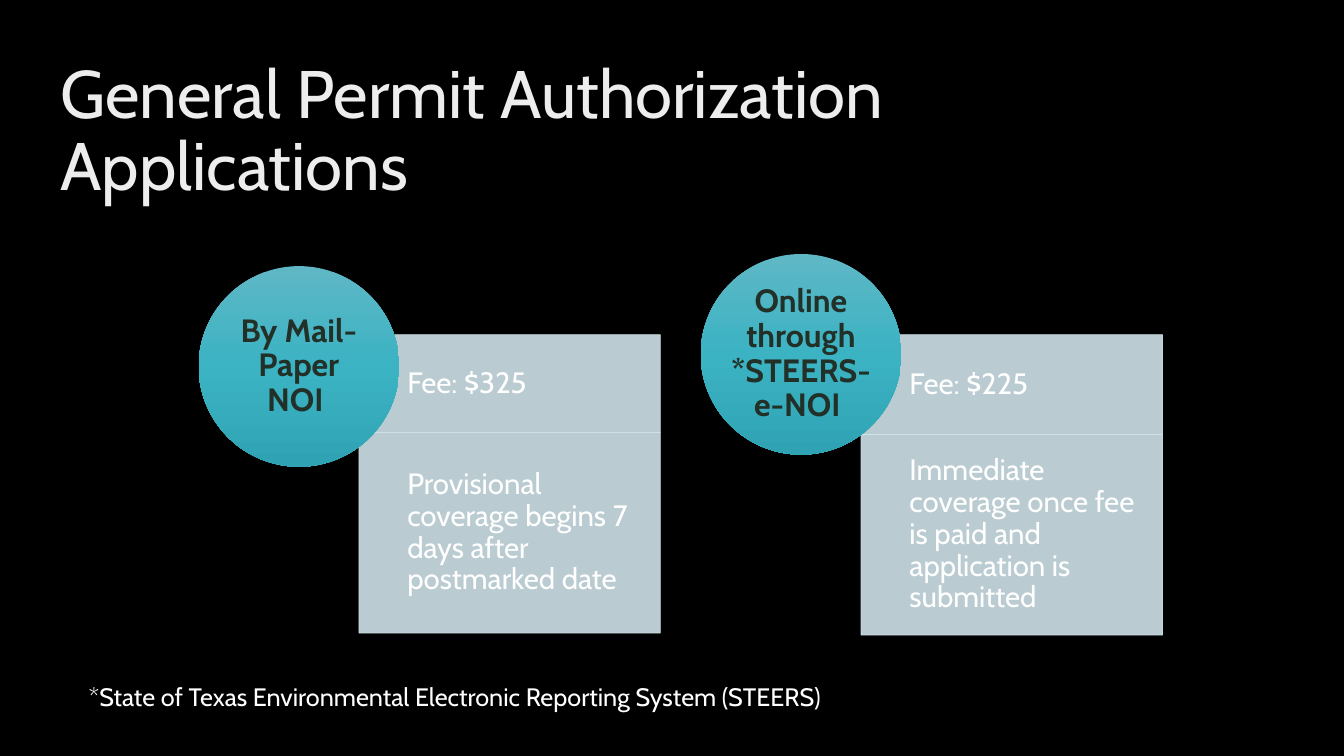
from copy import deepcopy

from lxml.etree import SubElement
from pptx import Presentation
from pptx.dml.color import RGBColor
from pptx.enum.shapes import MSO_SHAPE as Shape
from pptx.enum.text import MSO_ANCHOR as Anchor, MSO_AUTO_SIZE as AutoSize, PP_ALIGN as Align
from pptx.oxml.ns import qn
from pptx.util import Inches, Pt

COLORS = {
    "background": "000000",
    "title": "EDEDED",
    "text": "FFFFFF",
    "panel": "CFE3E8",
    "circle_text": "223028",
}
CIRCLE_GRADIENT = [(0, "5FB7C5"), (0.5, "3BB3C3"), (1, "2FA3B3")]
FONT = "Cabin"
PANEL_WIDTH = 2.99
DETAIL_HEIGHT = 1.99
CIRCLE_SIZE = 1.99
PANEL_TOP = 3.32
CIRCLE_OFFSET = 1.59

# Circle label, circle top, panel left, fee, fee row height, coverage
METHODS = [
    ("By Mail-Paper NOI ", 2.64, 3.56, "Fee: $325", 0.97,
     "Provisional coverage begins 7 days after postmarked date"),
    ("Online through *STEERS- e-NOI ", 2.52, 8.54, "Fee: $225", 0.99,
     "Immediate coverage once fee is paid and application is submitted"),
]


def rgb(name):
    return RGBColor.from_string(COLORS[name])


def write(shape, text, size, color="text", bold=False, align=Align.LEFT,
          anchor=Anchor.MIDDLE, spacing=0.9, insets=(0.1, 0.05, 0.1, 0.05)):
    frame = shape.text_frame
    frame.word_wrap = True
    frame.auto_size = AutoSize.NONE
    frame.vertical_anchor = anchor
    (frame.margin_left, frame.margin_top,
     frame.margin_right, frame.margin_bottom) = map(Inches, insets)
    frame.text = text
    paragraph = frame.paragraphs[0]
    paragraph.alignment = align
    paragraph.line_spacing = spacing
    paragraph.space_before = Pt(0)
    font = paragraph.font
    font.name, font.size, font.bold = FONT, Pt(size), bold
    font.color.rgb = rgb(color)


def add_panel(slide, text, left, top, height):
    panel = slide.shapes.add_shape(
        Shape.RECTANGLE, Inches(left), Inches(top), Inches(PANEL_WIDTH), Inches(height))
    panel.shadow.inherit = False
    panel.fill.solid()
    panel.fill.fore_color.rgb = rgb("panel")
    panel.line.color.rgb = rgb("panel")
    panel.line.width = Pt(0.5)
    for color in panel._element.spPr.iter(qn("a:srgbClr")):
        SubElement(color, qn("a:alpha"), val="90000")
    write(panel, text, 21, insets=(0.48, 0.16, 0.16, 0.16))


def add_circle(slide, text, left, top):
    circle = slide.shapes.add_shape(
        Shape.OVAL, Inches(left), Inches(top), Inches(CIRCLE_SIZE), Inches(CIRCLE_SIZE))
    circle.shadow.inherit = False
    circle.line.fill.background()
    circle.fill.gradient()
    circle.fill.gradient_angle = 270
    stops = circle._element.spPr.find(".//" + qn("a:gsLst"))
    stops.insert(1, deepcopy(stops[0]))
    for stop, (position, color) in zip(circle.fill.gradient_stops, CIRCLE_GRADIENT):
        stop.position = position
        stop.color.rgb = RGBColor.from_string(color)
    write(circle, text, 23, "circle_text", bold=True, align=Align.CENTER,
          insets=(0, 0, 0, 0))


def add_method(slide, label, circle_top, left, fee, fee_height, coverage):
    add_panel(slide, fee, left, PANEL_TOP, fee_height)
    add_panel(slide, coverage, left, PANEL_TOP + fee_height, DETAIL_HEIGHT)
    add_circle(slide, label, left - CIRCLE_OFFSET, circle_top)


def main():
    deck = Presentation()
    deck.slide_width, deck.slide_height = Inches(13.33), Inches(7.5)
    slide = deck.slides.add_slide(deck.slide_layouts[5])
    slide.background.fill.solid()
    slide.background.fill.fore_color.rgb = rgb("background")

    title = slide.shapes.title
    title.left, title.top = Inches(0.5), Inches(0.49)
    title.width, title.height = Inches(9.33), Inches(1.65)
    write(title, "General Permit Authorization\vApplications", 48, "title")

    for method in METHODS:
        add_method(slide, *method)

    footnote = slide.shapes.add_textbox(
        Inches(0.78), Inches(6.71), Inches(11.01), Inches(0.4))
    write(footnote, "*State of Texas Environmental Electronic Reporting System (STEERS)",
          18, anchor=Anchor.TOP, spacing=1.0)
    deck.save("out.pptx")


if __name__ == "__main__":
    main()
